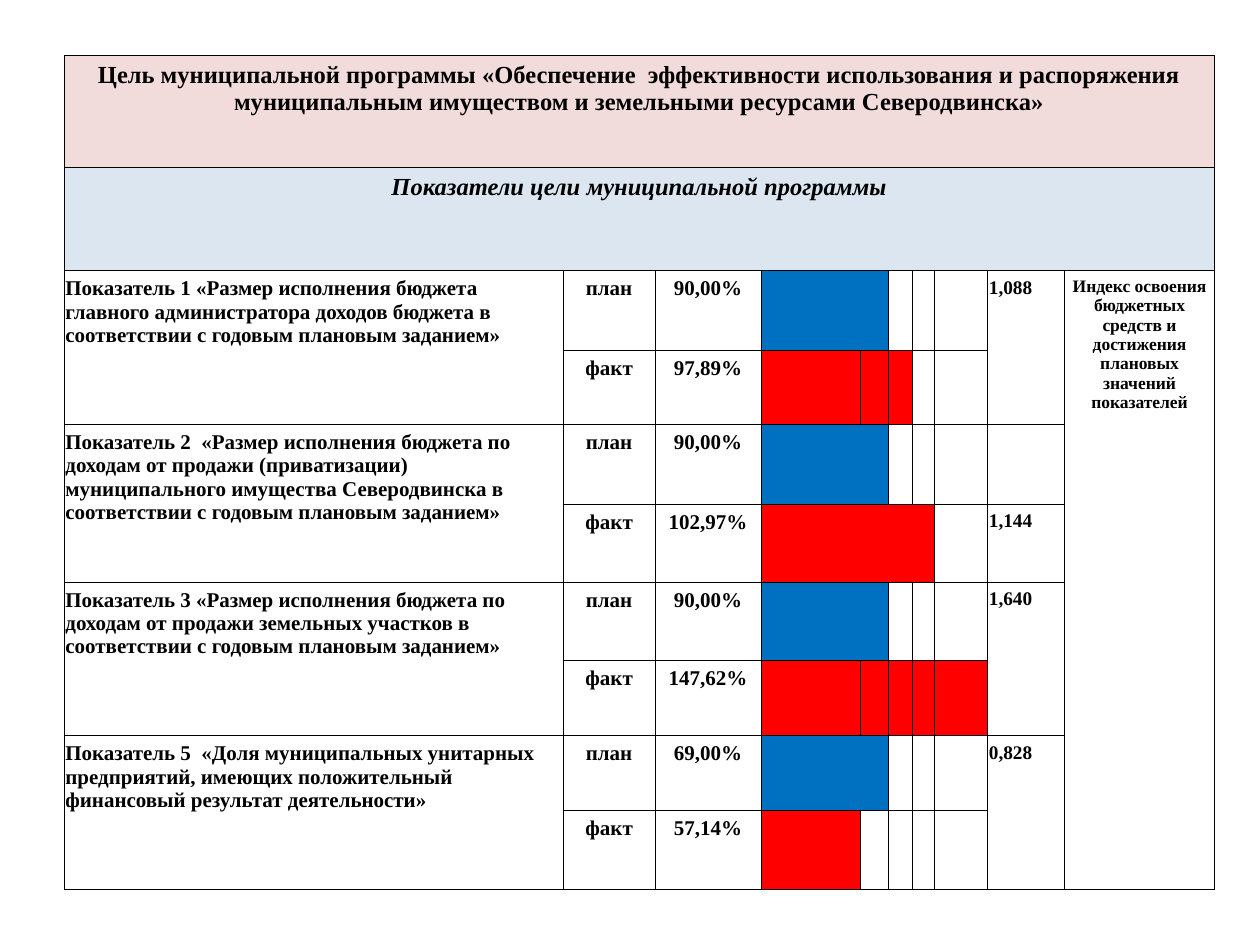
import pptx
import pptx.util
import pptx.dml.color
import pptx.enum.text
import pptx.oxml
import pptx.oxml.ns
import lxml.etree

Pt = pptx.util.Pt
CENTER = pptx.enum.text.PP_ALIGN.CENTER
LEFT = pptx.enum.text.PP_ALIGN.LEFT

COLUMNS = [285.1, 52.6, 60.5, 56.9, 15.8, 13.7, 13, 30.2, 43.9, 85.7]
ROWS = [64.1, 59, 45.4, 42.5, 45.4, 44.6, 44.6, 43.2, 42.5, 45.4]
LABEL, KIND, VALUE, BAR, INDEX, NOTE = 0, 1, 2, 3, 8, 9
BLUE, RED = "0070C0", "FF0000"

GOAL = ("Цель муниципальной программы «Обеспечение  эффективности использования "
        "и распоряжения муниципальным имуществом и земельными ресурсами Северодвинска»")
SUBTITLE = "Показатели цели муниципальной программы"
INDEX_NOTE = "Индекс освоения бюджетных средств и достижения плановых значений показателей"

# label, plan, fact, filled bar columns, bar in one piece, index
INDICATORS = [
    ("Показатель 1 «Размер исполнения бюджета главного администратора доходов бюджета "
     "в соответствии с годовым плановым заданием»", "90,00%", "97,89%", 3, False, "1,088"),
    ("Показатель 2  «Размер исполнения бюджета по доходам от продажи (приватизации) "
     "муниципального имущества Северодвинска в соответствии с годовым плановым заданием»",
     "90,00%", "102,97%", 4, True, "1,144"),
    ("Показатель 3 «Размер исполнения бюджета по доходам от продажи земельных участков "
     "в соответствии с годовым плановым заданием»", "90,00%", "147,62%", 5, False, "1,640"),
    ("Показатель 5  «Доля муниципальных унитарных предприятий, имеющих положительный "
     "финансовый результат деятельности»", "69,00%", "57,14%", 1, False, "0,828"),
]


def rgb(color):
    return pptx.dml.color.RGBColor.from_string(color)


def write(cell, text, size=12, italic=False, align=CENTER):
    p = cell.text_frame.paragraphs[0]
    p.alignment = align
    r = p.add_run()
    r.text = text
    f = r.font
    f.name, f.size, f.bold, f.italic = "Times New Roman", Pt(size), True, italic
    f.color.rgb = rgb("000000")


def paint(cell, color):
    cell.fill.solid()
    cell.fill.fore_color.rgb = rgb(color)


def add_borders(cell, color="000000", width=0.5):
    tcPr = cell._tc.get_or_add_tcPr()
    for side in ("lnL", "lnR", "lnT", "lnB"):
        ln = lxml.etree.SubElement(tcPr, pptx.oxml.ns.qn(f"a:{side}"), w=str(Pt(width)))
        fill = lxml.etree.SubElement(ln, pptx.oxml.ns.qn("a:solidFill"))
        lxml.etree.SubElement(fill, pptx.oxml.ns.qn("a:srgbClr"), val=color)


def add_grid(s, left, top):
    table = s.shapes.add_table(len(ROWS), len(COLUMNS), Pt(left), Pt(top),
                               Pt(sum(COLUMNS)), Pt(sum(ROWS))).table
    table.first_row = table.horz_banding = False
    for column, width in zip(table.columns, COLUMNS):
        column.width = Pt(width)
    for row, height in zip(table.rows, ROWS):
        row.height = Pt(height)
    for cell in table.iter_cells():
        cell.margin_left = cell.margin_right = Pt(0.7)
        cell.margin_top = cell.margin_bottom = Pt(3.6)
        add_borders(cell)
        cell.fill.background()
    return table


def merge(table, row, col, height=1, width=1):
    cell = table.cell(row, col)
    cell.merge(table.cell(row + height - 1, col + width - 1))
    return cell


def fill_headings(table):
    headings = [(GOAL, "F2DBDB", False), (SUBTITLE, "DCE6F1", True)]
    for row, (text, color, italic) in enumerate(headings):
        cell = merge(table, row, 0, width=len(COLUMNS))
        paint(cell, color)
        write(cell, text, size=14, italic=italic)


def fill_indicator(table, row, label, plan, fact, filled, one_piece, index):
    """Fill the plan row and the fact row of one indicator."""
    write(merge(table, row, LABEL, height=2), label, align=LEFT)
    for i, (kind, value) in enumerate([("план", plan), ("факт", fact)]):
        write(table.cell(row + i, KIND), kind)
        write(table.cell(row + i, VALUE), value)

    paint(merge(table, row, BAR, width=2), BLUE)
    if one_piece:
        paint(merge(table, row + 1, BAR, width=filled), RED)
        index_cell = table.cell(row + 1, INDEX)
    else:
        for col in range(BAR, BAR + filled):
            paint(table.cell(row + 1, col), RED)
        index_cell = merge(table, row, INDEX, height=2)
    write(index_cell, index, size=11, align=LEFT)


def add_indicator_table(s, left, top):
    table = add_grid(s, left, top)
    fill_headings(table)
    for i, indicator in enumerate(INDICATORS):
        fill_indicator(table, 2 + 2 * i, *indicator)
    write(merge(table, 2, NOTE, height=2 * len(INDICATORS)), INDEX_NOTE, size=10)


def main():
    prs = pptx.Presentation()
    prs.slide_width, prs.slide_height = Pt(720), Pt(540)
    s = prs.slides.add_slide(prs.slide_layouts[6])
    add_indicator_table(s, 36.7, 31.7)
    prs.save("out.pptx")


if __name__ == "__main__":
    main()
